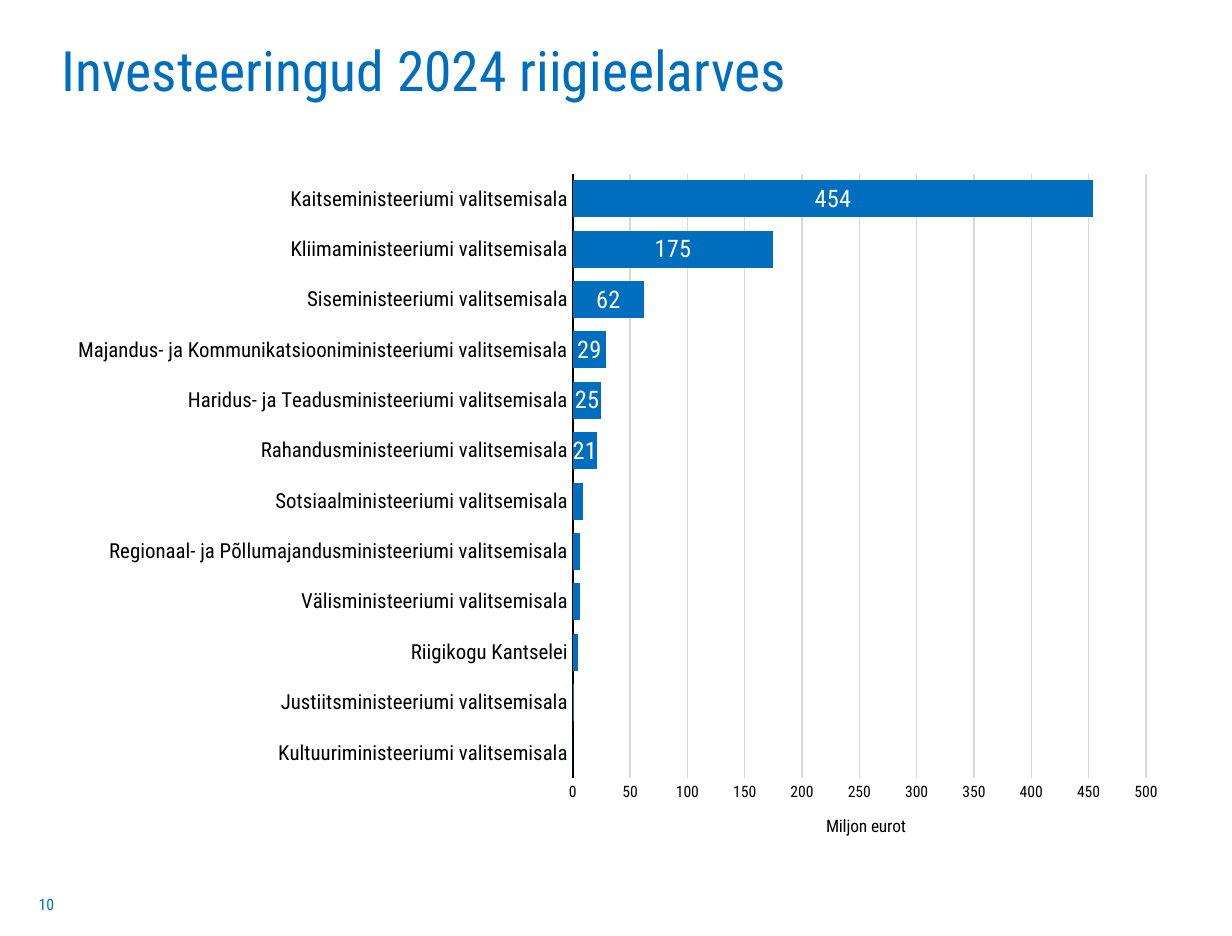
from lxml.etree import SubElement
from pptx import Presentation
from pptx.chart.data import CategoryChartData
from pptx.dml.color import RGBColor
from pptx.enum.chart import XL_CHART_TYPE, XL_LABEL_POSITION, XL_TICK_MARK
from pptx.oxml import parse_xml
from pptx.oxml.ns import nsdecls, qn
from pptx.util import Cm, Inches, Pt

WIDTH, HEIGHT = Cm(25), Cm(19)
FONT = "Roboto Condensed"
COLORS = {"blue": "006EBE", "black": "000000", "white": "FFFFFF", "grid": "D9D9D9"}
SMALLEST_LABEL = 20
INVESTMENTS = {
    "Kultuuriministeeriumi valitsemisala": 0,
    "Justiitsministeeriumi valitsemisala": 1,
    "Riigikogu Kantselei": 5,
    "Välisministeeriumi valitsemisala": 6,
    "Regionaal- ja Põllumajandusministeeriumi valitsemisala": 6,
    "Sotsiaalministeeriumi valitsemisala": 9,
    "Rahandusministeeriumi valitsemisala": 21,
    "Haridus- ja Teadusministeeriumi valitsemisala": 25,
    "Majandus- ja Kommunikatsiooniministeeriumi valitsemisala": 29,
    "Siseministeeriumi valitsemisala": 62,
    "Kliimaministeeriumi valitsemisala": 175,
    "Kaitseministeeriumi valitsemisala": 454,
}


def color(name):
    """Return the named colour."""
    return RGBColor.from_string(COLORS[name])


def style_font(font, size, name):
    """Set typeface, size and colour with no bold."""
    font.name, font.size, font.bold = FONT, Pt(size), False
    font.color.rgb = color(name)


def add_text(page, box, text, size, spacing, top_inset=0):
    """Place one blue line of text in the box."""
    shape = page.shapes.add_textbox(*map(Inches, box))
    frame = shape.text_frame
    frame.word_wrap = True
    frame.margin_left = frame.margin_right = frame.margin_bottom = 0
    frame.margin_top = Inches(top_inset)
    frame.text = text
    para = frame.paragraphs[0]
    para.line_spacing = spacing
    style_font(para.runs[0].font, size, "blue")


def set_layout(parent, before, **shares):
    """Place a chart part by shares of the chart area."""
    for old in parent.findall(qn("c:layout")):
        parent.remove(old)
    layout = parse_xml(f"<c:layout {nsdecls('c')}/>")
    manual = SubElement(layout, qn("c:manualLayout"))
    if "w" in shares:
        SubElement(manual, qn("c:layoutTarget"), val="inner")
    for side in ("x", "y"):
        SubElement(manual, qn(f"c:{side}Mode"), val="edge")
    for key, share in shares.items():
        SubElement(manual, qn(f"c:{key}"), val=str(share))
    parent.find(qn(before)).addprevious(layout)


def style_axes(chart):
    """Format the ministry names and the scale in millions."""
    ministries, scale = chart.category_axis, chart.value_axis
    for axis, size in ((ministries, 12), (scale, 9)):
        axis.major_tick_mark = axis.minor_tick_mark = XL_TICK_MARK.NONE
        style_font(axis.tick_labels.font, size, "black")
    ministries.format.line.color.rgb = color("black")
    ministries.format.line.width = Pt(1.25)
    scale.minimum_scale, scale.maximum_scale, scale.major_unit = 0, 500, 50
    scale.tick_labels.number_format = "0"
    scale.tick_labels.number_format_is_linked = False
    scale.format.line.fill.background()
    grid = scale.major_gridlines.format.line
    grid.color.rgb, grid.width = color("grid"), Pt(0.75)
    title = scale.axis_title
    title.text_frame.text = "Miljon eurot"
    style_font(title.text_frame.paragraphs[0].runs[0].font, 10, "black")
    set_layout(title._element, "c:overlay", x=0.688, y=0.959)


def style_bars(plot):
    """Colour the bars and label the large values."""
    plot.gap_width, plot.overlap, plot.vary_by_categories = 36, 100, False
    series = plot.series[0]
    series.format.fill.solid()
    series.format.fill.fore_color.rgb = color("blue")
    labels = series.data_labels
    labels.show_value = True
    labels.position = XL_LABEL_POSITION.CENTER
    labels.number_format, labels.number_format_is_linked = "0", False
    style_font(labels.font, 14, "white")
    small = [i for i, value in enumerate(series.values) if value < SMALLEST_LABEL]
    for place, index in enumerate(small):
        label = parse_xml(
            f'<c:dLbl {nsdecls("c")}><c:idx val="{index}"/><c:delete val="1"/></c:dLbl>'
        )
        labels._element.insert(place, label)


def add_investment_chart(page, box):
    """Draw investments by ministry as horizontal bars."""
    data = CategoryChartData(number_format="0")
    data.categories = list(INVESTMENTS)
    data.add_series("Series 1", list(INVESTMENTS.values()))
    frame = page.shapes.add_chart(XL_CHART_TYPE.BAR_STACKED, *map(Inches, box), data)
    chart = frame.chart
    chart.has_legend = chart.has_title = False
    style_font(chart.font, 10, "black")
    style_axes(chart)
    style_bars(chart.plots[0])
    area = chart._chartSpace.chart.plotArea
    set_layout(area, "c:barChart", x=0.462, y=0, w=0.518, h=0.908)


def main():
    """Build and save the slide."""
    deck = Presentation()
    deck.slide_width, deck.slide_height = WIDTH, HEIGHT
    page = deck.slides.add_slide(deck.slide_layouts[6])
    left = 0.05 * WIDTH.inches
    add_text(page, (left, 0.04 * HEIGHT.inches, 0.88 * WIDTH.inches, 0.09 * HEIGHT.inches),
             "Investeeringud 2024 riigieelarves", 32, 0.88, 0.06)
    add_investment_chart(page, (left, 1.38, 8.84, 5.35))
    add_text(page, (0.31, 7.16, 2.57, 0.3), "10", 9, 0.95)
    deck.save("out.pptx")


if __name__ == "__main__":
    main()
